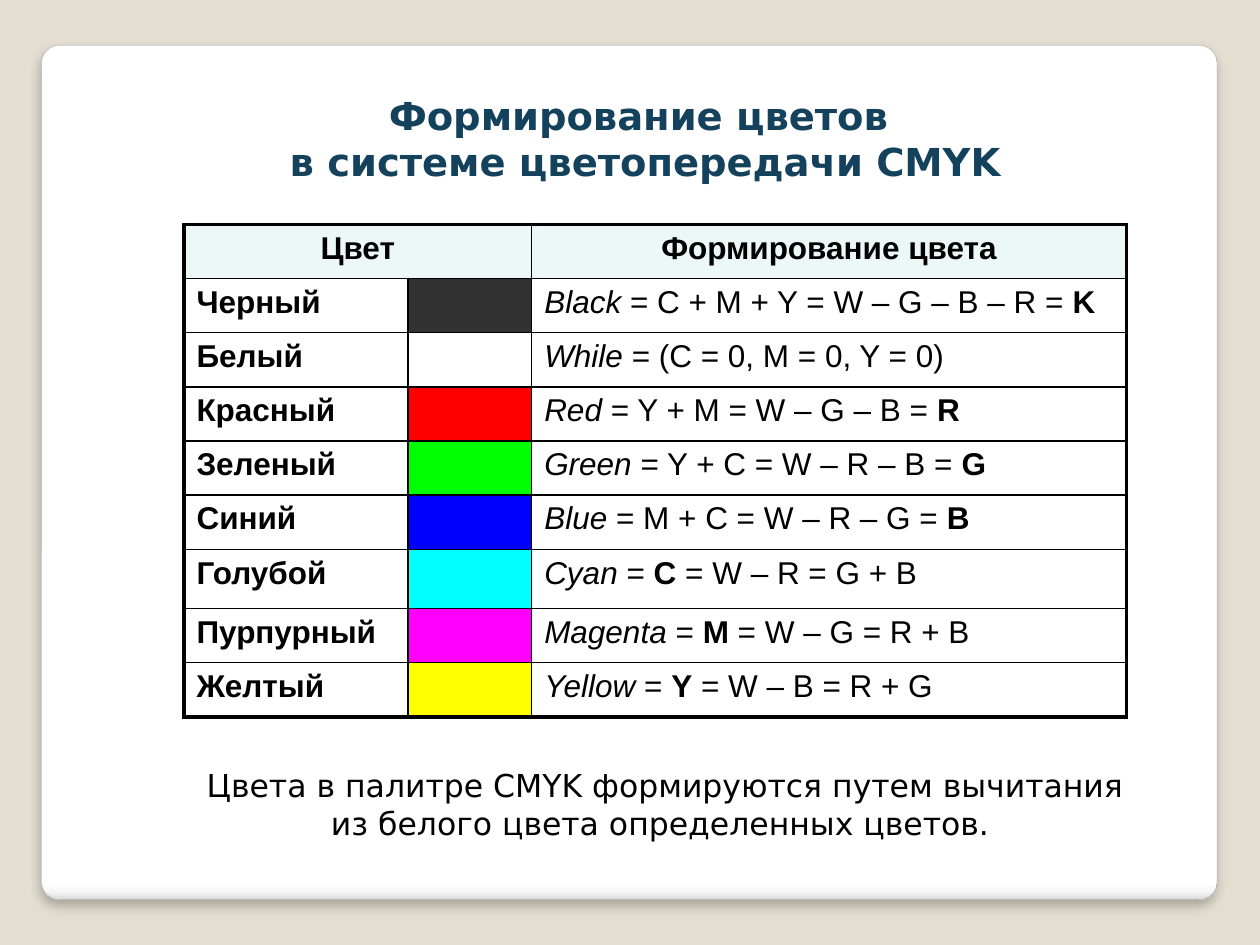
from lxml.etree import SubElement
from pptx import Presentation
from pptx.dml.color import RGBColor
from pptx.enum.shapes import MSO_SHAPE
from pptx.enum.text import MSO_AUTO_SIZE, PP_ALIGN
from pptx.oxml import parse_xml
from pptx.oxml.ns import nsdecls, qn
from pptx.util import Inches, Pt

COLORS = {
    "background": "E3DED1", "panel": "FFFFFF", "panel_line": "A4A4A4",
    "title": "14425D", "text": "000000", "header": "ECF8F7",
}
PANEL_STOPS = [(0, "FFFFFF"), (98, "FFFFFF"), (99, "F7F7F7"), (100, "DADADA")]
ROWS = [
    ("Черный", "323232", "Black", " = C + M + Y = W – G – B – R = ", "K", ""),
    ("Белый", None, "While", " = (C = 0, M = 0, Y = 0)", "", ""),
    ("Красный", "FF0000", "Red", " = Y + M = W – G – B = ", "R", ""),
    ("Зеленый", "00FF00", "Green", " = Y + C = W – R – B = ", "G", ""),
    ("Синий", "0000FF", "Blue", " = M + C = W – R – G = ", "B", ""),
    ("Голубой", "00FFFF", "Cyan", " = ", "C", " = W – R = G + B"),
    ("Пурпурный", "FF00FF", "Magenta", " = ", "M", " = W – G = R + B"),
    ("Желтый", "FFFF00", "Yellow", " = ", "Y", " = W – B = R + G"),
]
COL_WIDTHS = [1.78, 0.98, 4.72]
ROW_HEIGHTS = [0.43] * 6 + [0.47] + [0.43] * 2


def rgb(name):
    return RGBColor.from_string(COLORS.get(name, name))


def set_font(font, name, size, color, bold=None):
    font.name, font.size, font.bold = name, Pt(size), bold
    font.color.rgb = rgb(color)


def add_panel(slide, left, top, width, height):
    sp = slide.shapes.add_shape(MSO_SHAPE.ROUNDED_RECTANGLE, left, top, width, height)
    sp.adjustments[0] = 0.021
    sp.line.color.rgb = rgb("panel_line")
    sp.line.width = Pt(0.16)
    stops = "".join(
        f'<a:gs pos="{pos * 1000}"><a:srgbClr val="{color}"/></a:gs>'
        for pos, color in PANEL_STOPS)
    sp_pr = sp.element.spPr
    sp_pr.find(qn("a:ln")).addprevious(parse_xml(
        f'<a:gradFill {nsdecls("a")}><a:gsLst>{stops}</a:gsLst>'
        '<a:lin ang="5400000" scaled="0"/></a:gradFill>'))
    sp_pr.append(parse_xml(
        f'<a:effectLst {nsdecls("a")}><a:outerShdw blurRad="{Pt(6)}" dist="{Pt(4)}" '
        'dir="5400000" algn="t" rotWithShape="0"><a:srgbClr val="000000">'
        '<a:alpha val="25000"/></a:srgbClr></a:outerShdw></a:effectLst>'))


def add_centered_text(slide, left, top, width, height, lines, size, color, bold=None):
    tf = slide.shapes.add_textbox(left, top, width, height).text_frame
    tf.word_wrap = True
    tf.auto_size = MSO_AUTO_SIZE.SHAPE_TO_FIT_TEXT
    tf.text = lines
    for p in tf.paragraphs:
        p.alignment = PP_ALIGN.CENTER
        set_font(p.font, "DejaVu Sans", size, color, bold)


def style_cell(cell, fill, row, col):
    tc_pr = cell._tc.get_or_add_tcPr()
    outer = {"lnL": col == 0, "lnR": col == len(COL_WIDTHS) - 1,
             "lnT": row == 0, "lnB": row == len(ROW_HEIGHTS) - 1}
    for side, is_outer in outer.items():
        ln = SubElement(tc_pr, qn(f"a:{side}"), w=str(Pt(2.25 if is_outer else 1)))
        SubElement(SubElement(ln, qn("a:solidFill")), qn("a:srgbClr"), val=COLORS["text"])
    if fill:
        cell.fill.solid()
        cell.fill.fore_color.rgb = rgb(fill)
    else:
        cell.fill.background()


def write_cell(cell, text, bold=None, align=None):
    p = cell.text_frame.paragraphs[0]
    p.text = text
    p.alignment = align
    set_font(p.font, "Arial", 18, "text", bold)
    return p


def write_formula(cell, name, middle, letter, tail):
    p = write_cell(cell, "")
    for text, italic, bold in ((name, True, None), (middle, None, None),
                               (letter, None, True), (tail, None, None)):
        if text:
            r = p.add_run()
            r.text = text
            r.font.italic, r.font.bold = italic, bold


def add_color_table(slide, left, top, width, height):
    table = slide.shapes.add_table(
        len(ROW_HEIGHTS), len(COL_WIDTHS), left, top, width, height).table
    table.first_row = table.horz_banding = False
    for column, size in zip(table.columns, COL_WIDTHS):
        column.width = Inches(size)
    for row, size in zip(table.rows, ROW_HEIGHTS):
        row.height = Inches(size)
    fills = [["header"] * 3] + [[None, swatch, None] for _, swatch, *_ in ROWS]
    for i, row_fills in enumerate(fills):
        for j, fill in enumerate(row_fills):
            style_cell(table.cell(i, j), fill, i, j)
    table.cell(0, 0).merge(table.cell(0, 1))
    write_cell(table.cell(0, 0), "Цвет", True, PP_ALIGN.CENTER)
    write_cell(table.cell(0, 2), "Формирование цвета", True, PP_ALIGN.CENTER)
    for i, (label, _, *formula) in enumerate(ROWS, 1):
        write_cell(table.cell(i, 0), label, True)
        write_formula(table.cell(i, 2), *formula)


def main():
    prs = Presentation()
    prs.slide_width, prs.slide_height = Inches(10), Inches(7.5)
    s = prs.slides.add_slide(prs.slide_layouts[6])
    s.background.fill.solid()
    s.background.fill.fore_color.rgb = rgb("background")
    add_panel(s, Inches(0.33), Inches(0.36), Inches(9.33), Inches(6.78))
    add_centered_text(s, Inches(1.85), Inches(0.68), Inches(6.54), Inches(0.84),
                      "Формирование цветов \nв системе цветопередачи СMYK",
                      22, "title", True)
    add_color_table(s, Inches(1.46), Inches(1.78), Inches(7.48), Inches(3.87))
    add_centered_text(s, Inches(1.46), Inches(6.03), Inches(7.64), Inches(0.71),
                      " Цвета в палитре CMYK формируются путем вычитания \v"
                      "из белого цвета определенных цветов. ", 18, "text")
    prs.save("out.pptx")


if __name__ == "__main__":
    main()
